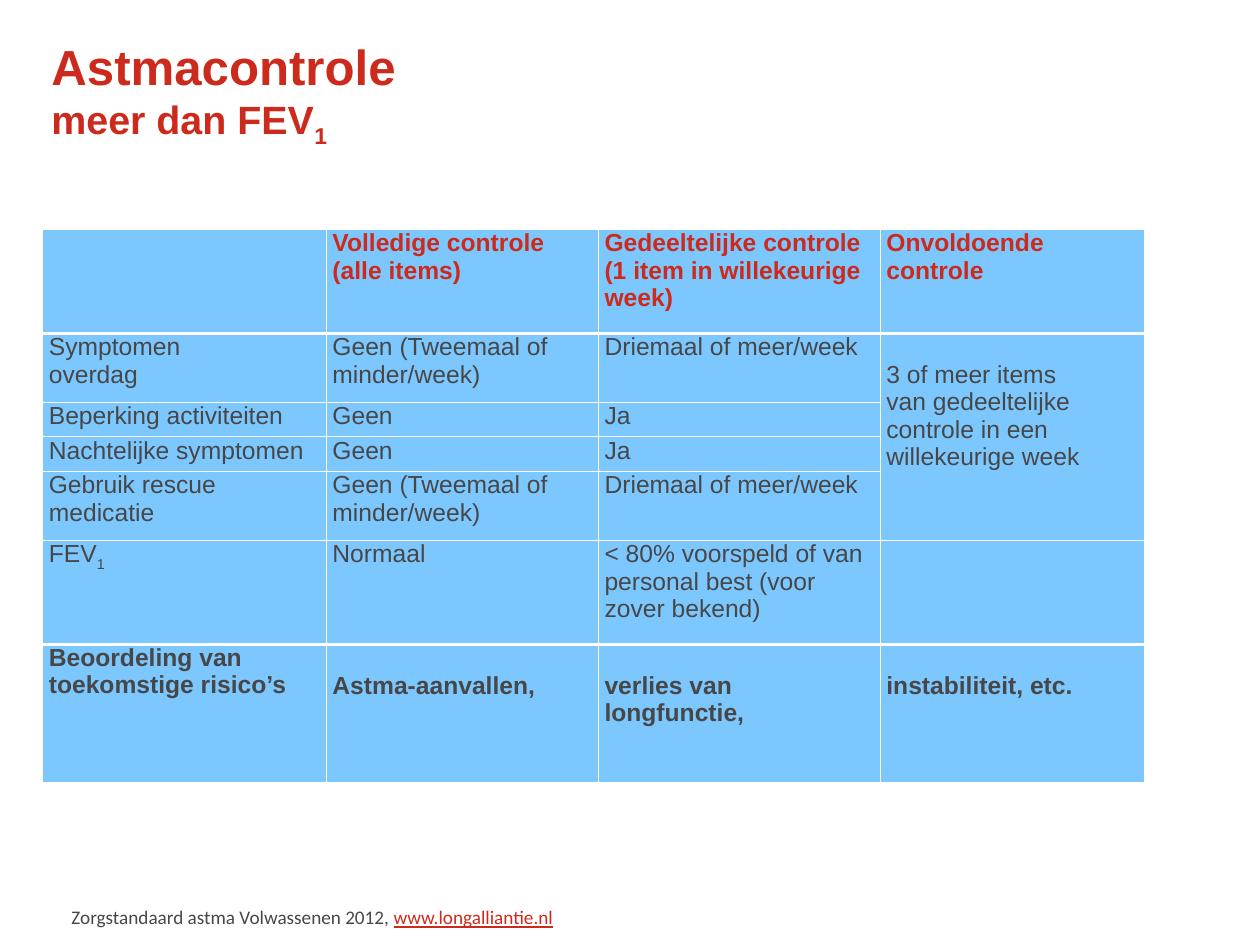
"""Build a slide with a table on levels of asthma control."""
from lxml.etree import SubElement
from pptx import Presentation
from pptx.dml.color import RGBColor
from pptx.enum.text import MSO_ANCHOR, PP_ALIGN
from pptx.oxml.ns import qn
from pptx.util import Cm, Pt

RED, GREY, BLUE, WHITE = "CC2A1C", "474747", "7DC7FF", "FFFFFF"
COLUMN_WIDTHS = [8.13, 7.8, 8.08, 7.57]
ROW_HEIGHTS = [2.97, 1.98, 0.99, 0.99, 1.98, 2.97, 3.96]
ONE_LINE = 0.79
ROWS = [
    ["", "Volledige controle\n(alle items)",
     "Gedeeltelijke controle\n(1 item in willekeurige week)", "Onvoldoende controle"],
    ["Symptomen\noverdag", "Geen (Tweemaal of minder/week)", "Driemaal of meer/week",
     "3 of meer items\nvan gedeeltelijke\ncontrole in een\nwillekeurige week"],
    ["Beperking activiteiten", "Geen", "Ja", ""],
    ["Nachtelijke symptomen", "Geen", "Ja", ""],
    ["Gebruik rescue\nmedicatie", "Geen (Tweemaal of minder/week)",
     "Driemaal of meer/week", ""],
    ["FEV_1", "Normaal", "< 80% voorspeld of van personal best (voor zover bekend)", ""],
    ["Beoordeling van toekomstige risico’s", "Astma-aanvallen,",
     "verlies van longfunctie,", "instabiliteit, etc."],
]
LAST_ROW = len(ROWS) - 1
LOWERED_CELLS = {(1, 3), (LAST_ROW, 1), (LAST_ROW, 2), (LAST_ROW, 3)}
THICK_LINES = {1, LAST_ROW}


def paint(target, colour):
    target.rgb = RGBColor.from_string(colour)


def set_font(font, name, size, colour, bold=False):
    font.name, font.size, font.bold = name, Pt(size), bold
    paint(font.color, colour)


def add_span(para, text, size=None):
    span = para.add_run()
    span.text = text
    if size:
        span.font.size = Pt(size)
    return span


def add_subscripted(para, text, size=None):
    base, _, subscript = text.partition("_")
    add_span(para, base, size)
    if subscript:
        span = add_span(para, subscript, size)
        span._r.get_or_add_rPr().set("baseline", "-25000")


def add_title(page):
    title = page.shapes.title
    title.left, title.top, title.width, title.height = Cm(1.22), Cm(1.09), Cm(33.25), Cm(2.01)
    title.text_frame.vertical_anchor = MSO_ANCHOR.TOP
    para = title.text_frame.paragraphs[0]
    para.alignment, para.line_spacing = PP_ALIGN.LEFT, 0.9
    set_font(para.font, "Arial", 40, RED, bold=True)
    add_span(para, "Astmacontrole", 40)
    para.add_line_break()
    add_subscripted(para, "meer dan FEV_1", 32)


def set_borders(cell, row):
    properties = cell._tc.get_or_add_tcPr()
    widths = {"lnL": 1, "lnR": 1, "lnT": 3 if row in THICK_LINES else 1,
              "lnB": 3 if row + 1 in THICK_LINES else 1}
    for side, width in widths.items():
        line = SubElement(properties, qn(f"a:{side}"), w=str(Pt(width)))
        fill = SubElement(line, qn("a:solidFill"))
        SubElement(fill, qn("a:srgbClr"), val=WHITE)


def fill_cell(cell, row, column, text):
    set_borders(cell, row)
    cell.fill.solid()
    paint(cell.fill.fore_color, BLUE)
    cell.margin_left = cell.margin_right = Cm(0.18)
    cell.margin_top = Cm(ONE_LINE if (row, column) in LOWERED_CELLS else 0)
    cell.margin_bottom = Cm(0)
    for index, line in enumerate(text.split("\n")):
        frame = cell.text_frame
        para = frame.add_paragraph() if index else frame.paragraphs[0]
        set_font(para.font, "Arial", 20, GREY if row else RED, bold=row in (0, LAST_ROW))
        if line:
            add_subscripted(para, line)


def add_control_table(page):
    table = page.shapes.add_table(len(ROWS), len(COLUMN_WIDTHS), Cm(1.22), Cm(6.58),
                                  Cm(sum(COLUMN_WIDTHS)), Cm(sum(ROW_HEIGHTS))).table
    table.horz_banding = False
    for column, width in zip(table.columns, COLUMN_WIDTHS):
        column.width = Cm(width)
    for row, height in zip(table.rows, ROW_HEIGHTS):
        row.height = Cm(height)
    for row, texts in enumerate(ROWS):
        for column, text in enumerate(texts):
            fill_cell(table.cell(row, column), row, column, text)
    table.cell(1, 3).merge(table.cell(4, 3))


def add_reference(page):
    box = page.shapes.add_textbox(Cm(1.8), Cm(25.83), Cm(20.19), Cm(1.27))
    box.text_frame.word_wrap = True
    para = box.text_frame.paragraphs[0]
    set_font(para.font, "Calibri", 15.6, GREY)
    add_span(para, "Zorgstandaard astma Volwassenen 2012, ")
    address = add_span(para, "www.longalliantie.nl")
    address.font.underline = True
    paint(address.font.color, RED)


def main():
    deck = Presentation()
    deck.slide_width, deck.slide_height = Cm(36.12), Cm(27.08)
    page = deck.slides.add_slide(deck.slide_layouts[5])
    add_title(page)
    add_control_table(page)
    add_reference(page)
    deck.save("out.pptx")


if __name__ == "__main__":
    main()
